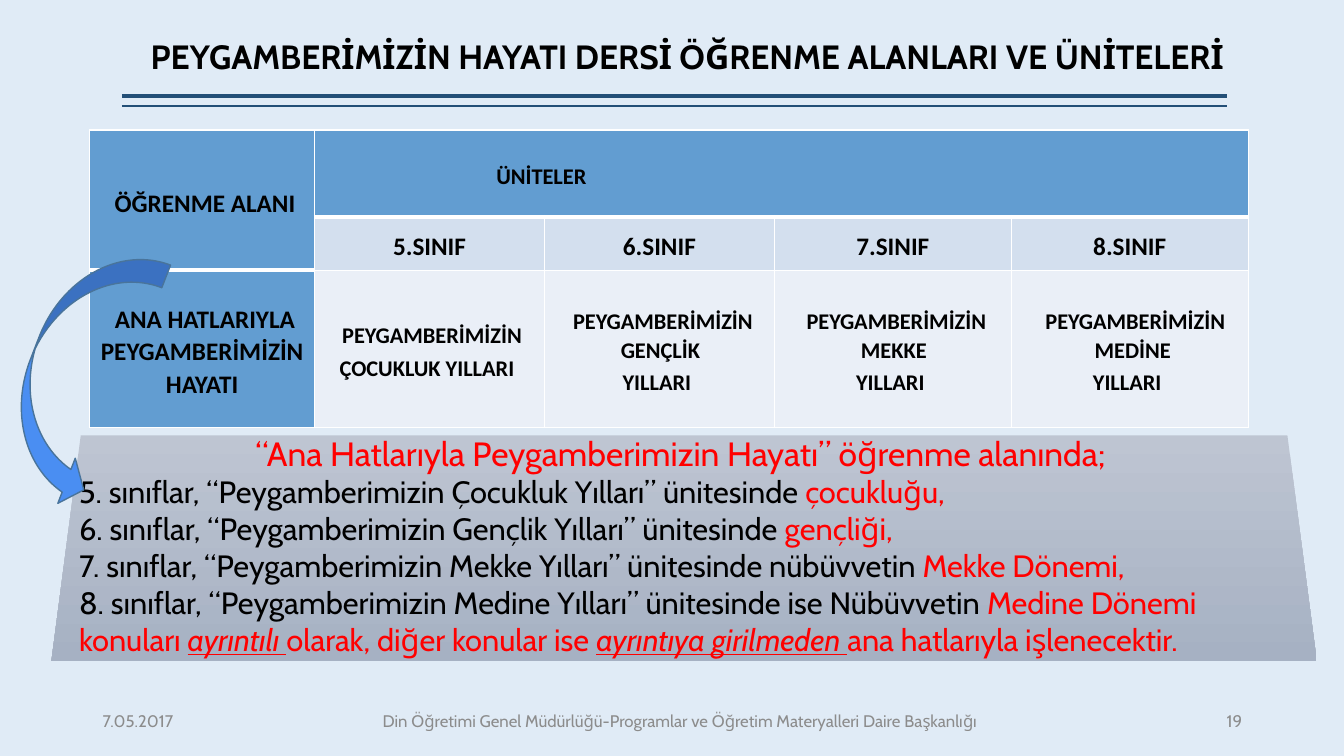
from lxml.etree import SubElement
from pptx import Presentation
from pptx.dml.color import RGBColor as RGB
from pptx.enum.shapes import MSO_CONNECTOR as CONN, MSO_SHAPE as SHAPE
from pptx.enum.text import MSO_ANCHOR as ANCHOR, PP_ALIGN as ALIGN
from pptx.oxml.ns import qn
from pptx.util import Inches, Pt

COLORS = {
    "bg": "E0EBF6", "rule": "234F77", "black": "000000", "red": "FF0000",
    "gray": "8C8C8C", "head": "629DD1", "grade": "D3DFEE", "unit": "EAEFF7",
    "white": "FFFFFF", "panel_top": "BEC5D2", "panel_bottom": "A6B1C3",
    "arrow": "4A8EF2", "arrow_line": "49749B",
}
COLS, ROWS = 133.3, 75
SLIDE_W, SLIDE_H = Inches(13.33), Inches(7.5)


def color(name):
    return RGB.from_string(COLORS[name])


def col(n):
    return round(SLIDE_W * n / COLS)


def row(n):
    return round(SLIDE_H * n / ROWS)


def box(x, y, w, h):
    return col(x), row(y), col(w), row(h)


class SlideBuilder:
    font = "Cabin"
    table_font = "Calibri"

    def __init__(self, prs):
        self.slide = prs.slides.add_slide(prs.slide_layouts[6])
        self.shapes = self.slide.shapes
        fill = self.slide.background.fill
        fill.solid()
        fill.fore_color.rgb = color("bg")

    def style(self, r, size, ink="black", font=None, bold=False):
        r.font.size = Pt(size)
        r.font.name = font or self.font
        r.font.bold = bold
        r.font.color.rgb = color(ink)

    def rule(self, x1, x2, y, width):
        line = self.shapes.add_connector(CONN.STRAIGHT, col(x1), row(y), col(x2), row(y))
        line.line.color.rgb = color("rule")
        line.line.width = Pt(width)
        SubElement(line._element.spPr, qn("a:effectLst"))

    def text(self, place, text, size, ink, align, bold=False):
        tf = self.shapes.add_textbox(*box(*place)).text_frame
        tf.word_wrap = True
        tf.vertical_anchor = ANCHOR.MIDDLE
        tf.text = text
        p = tf.paragraphs[0]
        p.alignment = align
        if bold:
            p.line_spacing = 0.9
        self.style(p.runs[0], size, ink, bold=bold)

    def table(self, place, widths, heights):
        frame = self.shapes.add_table(len(heights), len(widths), *box(*place))
        table = frame.table
        table.first_row = table.horz_banding = False
        for column, w in zip(table.columns, widths):
            column.width = col(w)
        for line, h in zip(table.rows, heights):
            line.height = row(h)
        return table

    def border(self, cell, bottom):
        tcPr = cell._tc.get_or_add_tcPr()
        for side, width in (("L", 1), ("R", 1), ("T", 1), ("B", bottom)):
            ln = SubElement(tcPr, qn(f"a:ln{side}"), w=str(Pt(width)))
            fill = SubElement(ln, qn("a:solidFill"))
            SubElement(fill, qn("a:srgbClr"), val=COLORS["white"])

    def cell(self, cell, text, size, fill, bottom=1, right=0.7, indent=0):
        self.border(cell, bottom)
        cell.fill.solid()
        cell.fill.fore_color.rgb = color(fill)
        cell.vertical_anchor = ANCHOR.MIDDLE
        cell.margin_left, cell.margin_right = col(0.7), col(right)
        cell.margin_top, cell.margin_bottom = row(0.5), 0
        tf = cell.text_frame
        tf.text = text
        for p in tf.paragraphs:
            p.alignment = ALIGN.CENTER
            p.line_spacing = 1.07
            for r in p.runs:
                self.style(r, size, font=self.table_font, bold=True)
        if len(tf.paragraphs) > 1:
            tf.paragraphs[0].space_after = Pt(2.2)
            tf.paragraphs[0]._p.get_or_add_pPr().set("marL", str(col(indent)))

    def panel(self, place, slant, lines):
        sp = self.shapes.add_shape(SHAPE.TRAPEZOID, *box(*place))
        sp.adjustments[0] = slant
        sp.shadow.inherit = False
        sp.line.fill.background()
        sp.fill.gradient()
        sp.fill.gradient_angle = 270
        for stop, name in zip(sp.fill.gradient_stops, ("panel_top", "panel_bottom")):
            stop.color.rgb = color(name)
        tf = sp.text_frame
        tf.word_wrap = True
        tf.vertical_anchor = ANCHOR.MIDDLE
        tf.margin_left = tf.margin_right = col(0.8)
        tf.margin_top, tf.margin_bottom = 0, row(1)
        for i, runs in enumerate(lines):
            p = tf.add_paragraph() if i else tf.paragraphs[0]
            p.alignment = ALIGN.LEFT if i else ALIGN.CENTER
            for text, ink, stressed in runs:
                r = p.add_run()
                r.text = text
                self.style(r, 22 if i else 24, ink)
                r.font.italic = r.font.underline = stressed

    def arrow(self, place, rotation, adjustments):
        sp = self.shapes.add_shape(SHAPE.CURVED_RIGHT_ARROW, *box(*place))
        sp.rotation = rotation
        for i, value in enumerate(adjustments):
            sp.adjustments[i] = value
        sp.shadow.inherit = False
        sp.fill.solid()
        sp.fill.fore_color.rgb = color("arrow")
        sp.line.color.rgb = color("arrow_line")
        sp.line.width = Pt(1)


def main():
    prs = Presentation()
    prs.slide_width, prs.slide_height = SLIDE_W, SLIDE_H
    s = SlideBuilder(prs)

    s.rule(12.1, 121.7, 9.5, 3)
    s.rule(12.1, 121.7, 10.5, 1)
    s.text((12.1, 1.6, 112.1, 8.4),
           "PEYGAMBERİMİZİN HAYATI DERSİ ÖĞRENME ALANLARI VE ÜNİTELERİ",
           24, "black", ALIGN.CENTER, bold=True)

    table = s.table((8.9, 12.9, 114.9, 29.5),
                    (22.3, 22.8, 22.8, 23.5, 23.5), (8.6, 5.3, 15.6))
    table.cell(0, 0).merge(table.cell(1, 0))
    table.cell(0, 1).merge(table.cell(0, 4))
    s.cell(table.cell(0, 0), " ÖĞRENME ALANI", 18, "head", bottom=3)
    s.border(table.cell(1, 0), 3)
    s.cell(table.cell(0, 1), "ÜNİTELER", 16, "head", bottom=3, right=48.3)
    for c in range(2, 5):
        s.border(table.cell(0, c), 3)
    s.cell(table.cell(2, 0), " ANA HATLARIYLA PEYGAMBERİMİZİN HAYATI", 18, "head")
    units = (
        (" PEYGAMBERİMİZİN\nÇOCUKLUK YILLARI ", 0),
        (" PEYGAMBERİMİZİN GENÇLİK\nYILLARI ", 0.2),
        (" PEYGAMBERİMİZİN MEKKE\nYILLARI ", 0.2),
        (" PEYGAMBERİMİZİN MEDİNE\nYILLARI ", 0.6),
    )
    for c, (unit, indent) in enumerate(units, 1):
        s.cell(table.cell(1, c), f"{c + 4}.SINIF", 18, "grade")
        s.cell(table.cell(2, c), unit, 16, "unit", indent=indent)

    footers = (
        (9.2, 12.5, "7.05.2017", ALIGN.LEFT),
        (25, 84.9, "Din Öğretimi Genel Müdürlüğü-Programlar ve Öğretim "
                   "Materyalleri Daire Başkanlığı", ALIGN.CENTER),
        (112.6, 11.6, "19", ALIGN.RIGHT),
    )
    for x, w, text, align in footers:
        s.text((x, 69.5, w, 4), text, 12, "gray", align)

    grades = (
        ("5. sınıflar, “Peygamberimizin Çocukluk Yılları” ünitesinde ", "çocukluğu,"),
        ("6. sınıflar, “Peygamberimizin Gençlik Yılları” ünitesinde ", "gençliği,"),
        ("7. sınıflar, “Peygamberimizin Mekke Yılları” ünitesinde nübüvvetin ",
         "Mekke Dönemi,"),
        ("8. sınıflar, “Peygamberimizin Medine Yılları” ünitesinde ise Nübüvvetin ",
         "Medine Dönemi"),
    )
    closing = ("konuları ", "ayrıntılı ", "olarak, diğer konular ise ",
               "ayrıntıya girilmeden ", "ana hatlarıyla işlenecektir.")
    lines = [[("“Ana Hatlarıyla Peygamberimizin Hayatı” öğrenme alanında; ", "red", False)]]
    lines += [[(unit, "black", False), (topic, "red", False)] for unit, topic in grades]
    lines.append([(text, "red", i % 2 == 1) for i, text in enumerate(closing)])
    s.panel((5.1, 43.2, 125.5, 22.4), 0.13, lines)
    s.arrow((2.9, 23.7, 9.6, 26.3), 21.1, (0.25, 0.5, 0.2))

    prs.save("out.pptx")


if __name__ == "__main__":
    main()
